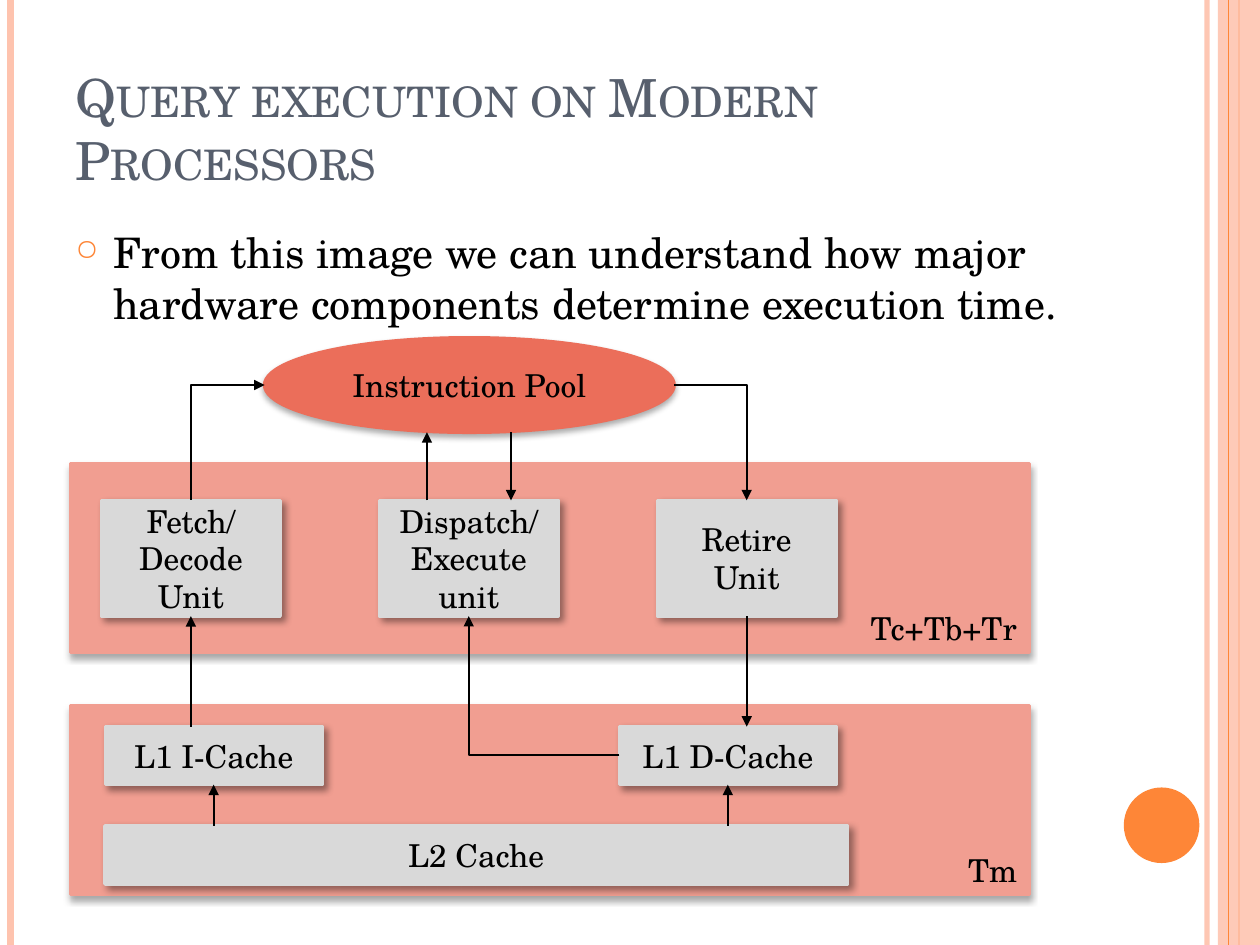
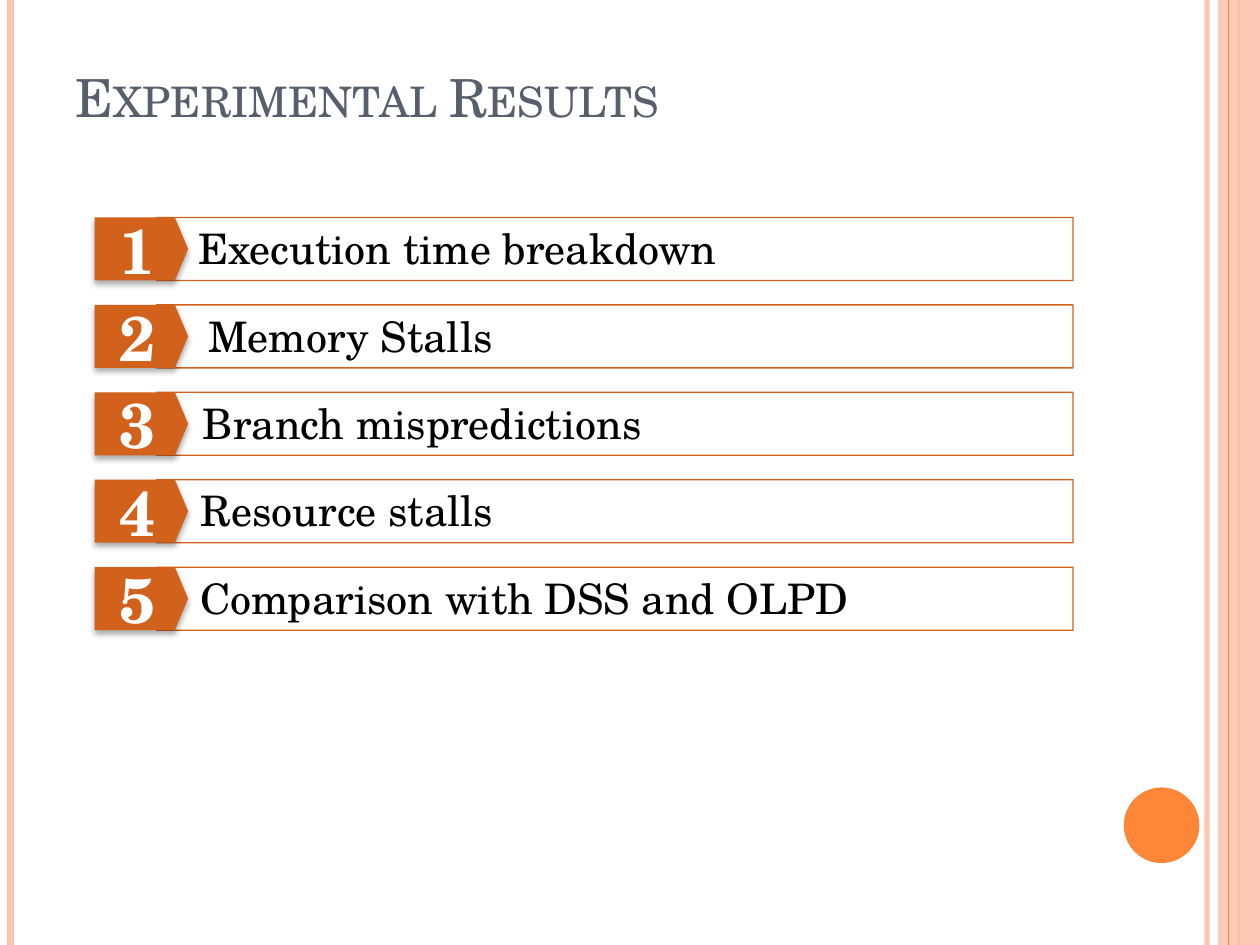
"""Build two slides on query execution: a processor diagram and a list of results."""
from dataclasses import dataclass

from lxml import etree
from pptx import Presentation
from pptx.dml.color import RGBColor
from pptx.enum import shapes, text
from pptx.oxml.ns import qn
from pptx.util import Pt

SHAPE = shapes.MSO_SHAPE
ALIGN = text.PP_ALIGN
ANCHOR = text.MSO_ANCHOR
TOP, BOTTOM = 0, 2


@dataclass(frozen=True)
class Theme:
    font: str = "TeX Gyre Schola"
    ink: str = "000000"
    heading: str = "575F6D"
    accent: str = "FE8637"
    blush: str = "FEC3AE"
    panel: str = "F19E91"
    pool: str = "EB6E5A"
    unit: str = "D9D9D9"
    badge: str = "D2611C"
    paper: str = "FFFFFF"
    title_size: int = 30
    body_size: int = 24
    label_size: int = 18
    badge_size: int = 36
    soft_shadow: tuple = (32, 3.5, 2.2, 90)
    corner_shadow: tuple = (40, 4, 3, 45)


THEME = Theme()


def assign(target, **values):
    for name, value in values.items():
        setattr(target, name, value)


def add_xml(parent, tag, **attributes):
    return etree.SubElement(parent, qn(tag), {key: str(value) for key, value in attributes.items()})


def set_alpha(colored, percent):
    for color in colored.iter(qn("a:srgbClr")):
        add_xml(color, "a:alpha", val=percent * 1000)


def write(shape, words, size, color=THEME.ink, align=ALIGN.LEFT, anchor=ANCHOR.TOP,
          bold=False, margins=(7.2, 3.6, 7.2, 3.6)):
    frame = shape.text_frame
    left, top, right, bottom = map(Pt, margins)
    assign(frame, word_wrap=True, vertical_anchor=anchor, margin_left=left,
           margin_top=top, margin_right=right, margin_bottom=bottom)
    paragraph = frame.paragraphs[0]
    paragraph.alignment = align
    run = paragraph.add_run()
    run.text = words
    assign(run.font, name=THEME.font, size=Pt(size), bold=bold)
    run.font.color.rgb = RGBColor.from_string(color)
    return paragraph


def add_textbox(slide, box, words, size, **style):
    return write(slide.shapes.add_textbox(*map(Pt, box)), words, size, **style)


def add_filled(slide, kind, box, color, outlined=False, shadow=None):
    shape = slide.shapes.add_shape(kind, *map(Pt, box))
    shape.shadow.inherit = False
    shape.fill.solid()
    shape.fill.fore_color.rgb = RGBColor.from_string(color)
    if outlined:
        shape.line.color.rgb = RGBColor.from_string(color)
        shape.line.width = Pt(2)
    else:
        shape.line.fill.background()
    if shadow:
        alpha, blur, distance, angle = shadow
        outer = add_xml(shape._element.spPr.find(qn("a:effectLst")), "a:outerShdw",
                        blurRad=Pt(blur), dist=Pt(distance), dir=angle * 60000, rotWithShape=0)
        add_xml(outer, "a:srgbClr", val="000000")
        set_alpha(outer, alpha)
    return shape


def add_line(slide, start, end, color=THEME.ink, width=1, elbow=False):
    kind = shapes.MSO_CONNECTOR.ELBOW if elbow else shapes.MSO_CONNECTOR.STRAIGHT
    line = slide.shapes.add_connector(kind, *map(Pt, (*start, *end)))
    line.line.color.rgb = RGBColor.from_string(color)
    line.line.width = Pt(width)
    properties = line._element.spPr
    add_xml(properties, "a:effectLst")
    if elbow:
        properties.find(qn("a:prstGeom")).set("prst", "bentConnector2")
    return line


def add_arrow(slide, start, end, elbow=False, arrowhead="a:tailEnd"):
    arrow = add_line(slide, start, end, elbow=elbow)
    add_xml(arrow._element.spPr.find(qn("a:ln")), arrowhead, type="triangle")
    return arrow


def add_frame(slide):
    for x, color, width, alpha in ((689.8, THEME.blush, 3, 93), (6, THEME.blush, 4.5, 100),
                                   (708, THEME.accent, 1.5, 100)):
        stripe = add_line(slide, (x, 0), (x, 540), color, width)
        if alpha < 100:
            set_alpha(stripe._element.spPr, alpha)
    band = add_filled(slide, SHAPE.RECTANGLE, (696, 0, 24, 540), THEME.blush)
    set_alpha(band._element.spPr, 87)
    add_line(slide, (702, 0), (702, 540), THEME.accent, 0.75)
    add_filled(slide, SHAPE.OVAL, (642.2, 450, 43.2, 43.2), THEME.accent)


def add_title(slide, words):
    title = add_textbox(slide, (36, 21.6, 588, 90), words, THEME.title_size,
                        color=THEME.heading, margins=(7.2, 15.4, 7.2, 3.6))
    title.runs[0]._r.get_or_add_rPr().set("cap", "small")


def add_bullet(slide, words):
    point = add_textbox(slide, (36, 126, 588, 384), words, THEME.body_size)
    point.space_before = Pt(6)
    properties = point._p.get_or_add_pPr()
    properties.set("marL", str(Pt(21.6)))
    properties.set("indent", str(Pt(-21.6)))
    add_xml(add_xml(properties, "a:buClr"), "a:srgbClr", val=THEME.accent)
    add_xml(properties, "a:buSzPct", val=70000)
    add_xml(properties, "a:buChar", char="○")


def add_panel(slide, top, words):
    panel = add_filled(slide, SHAPE.RECTANGLE, (40.3, top, 548, 108), THEME.panel,
                       True, THEME.soft_shadow)
    write(panel, words, THEME.label_size, align=ALIGN.RIGHT, anchor=ANCHOR.BOTTOM)


def add_node(slide, box, words, kind=SHAPE.RECTANGLE, color=THEME.unit,
             shadow=THEME.corner_shadow):
    node = add_filled(slide, kind, box, color, True, shadow)
    write(node, words, THEME.label_size, align=ALIGN.CENTER, anchor=ANCHOR.MIDDLE)
    return node


def add_result(slide, number, top, text_left, words):
    left, notch, right, height = 89.5, 101.5, 613.2, 36
    outline = slide.shapes.build_freeform(Pt(right), Pt(top), scale=1.0)
    corners = ((left, top), (notch, top + height / 2), (left, top + height), (right, top + height))
    outline.add_line_segments([(Pt(x), Pt(y)) for x, y in corners], close=True)
    bar = outline.convert_to_shape()
    bar.shadow.inherit = False
    bar.fill.background()
    bar.line.color.rgb = RGBColor.from_string(THEME.badge)
    bar.line.width = Pt(0.75)
    badge = add_filled(slide, SHAPE.PENTAGON, (54, top, 53.5, height), THEME.badge,
                       shadow=THEME.soft_shadow)
    badge.adjustments[0] = 0.21
    write(badge, str(number), THEME.badge_size, color=THEME.paper, align=ALIGN.CENTER,
          anchor=ANCHOR.MIDDLE, bold=True, margins=(0, 0, 0, 0))
    add_textbox(slide, (text_left, top, 448, height), words, THEME.body_size, margins=(3,) * 4)


def build_processor_slide(slide):
    add_title(slide, "Query execution on Modern Processors")
    add_bullet(slide, "From this image we can understand how major hardware components "
                      "determine execution time.")
    add_panel(slide, 265, "Tc+Tb+Tr")
    add_panel(slide, 403.2, "Tm")

    unit_top, unit_bottom, unit_width = 285.9, 352.1, 102.2
    fetch, dispatch, retire = (
        add_node(slide, (58 + 158.8 * column, unit_top, unit_width, unit_bottom - unit_top), words)
        for column, words in enumerate(("Fetch/ Decode Unit", "Dispatch/Execute unit",
                                        "Retire Unit")))
    fetch_x, dispatch_x, retire_x = (58 + 158.8 * column + unit_width / 2 for column in range(3))

    cache_top, l2_top, cache_height = 415.2, 472, 33.2
    i_cache = add_node(slide, (60.2, cache_top, 123.8, cache_height), "L1 I-Cache")
    d_cache = add_node(slide, (354, cache_top, 123.8, cache_height), "L1 D-Cache")
    add_node(slide, (60, l2_top, 424.3, cache_height), "L2 Cache")
    pool_left, pool_right, pool_middle, pool_bottom = 151.2, 385.2, 220, 247
    add_node(slide, (pool_left, 193, pool_right - pool_left, 54), "Instruction Pool",
             SHAPE.OVAL, THEME.pool, THEME.soft_shadow)

    add_arrow(slide, (fetch_x, cache_top), (fetch_x, unit_bottom)).end_connect(fetch, BOTTOM)
    add_arrow(slide, (retire_x, unit_bottom), (retire_x, cache_top)).begin_connect(retire, BOTTOM)
    for cache, x in ((i_cache, 122.1), (d_cache, 415.9)):
        add_arrow(slide, (x, l2_top), (x, cache_top + cache_height)).end_connect(cache, BOTTOM)
    add_arrow(slide, (354, 431.4), (dispatch_x, unit_bottom), elbow=True)
    add_arrow(slide, (pool_left, pool_middle), (fetch_x, unit_top), True, "a:headEnd")
    add_arrow(slide, (pool_right, pool_middle), (retire_x, unit_top), True)
    add_arrow(slide, (244, unit_top), (244, pool_bottom))
    add_arrow(slide, (292, pool_bottom), (292, unit_top))


def build_results_slide(slide):
    add_title(slide, "Experimental Results")
    results = ((110.2, "Execution time breakdown"), (115.9, "Memory Stalls"),
               (113, "Branch mispredictions"), (111.6, "Resource stalls"),
               (111.6, "Comparison with DSS and OLPD"))
    for row, (text_left, words) in enumerate(results):
        add_result(slide, row + 1, 124.3 + 49.95 * row, text_left, words)


def main():
    deck = Presentation()
    assign(deck, slide_width=Pt(720), slide_height=Pt(540))
    for build in (build_processor_slide, build_results_slide):
        slide = deck.slides.add_slide(deck.slide_layouts[6])
        add_frame(slide)
        build(slide)
    deck.save("out.pptx")


if __name__ == "__main__":
    main()
